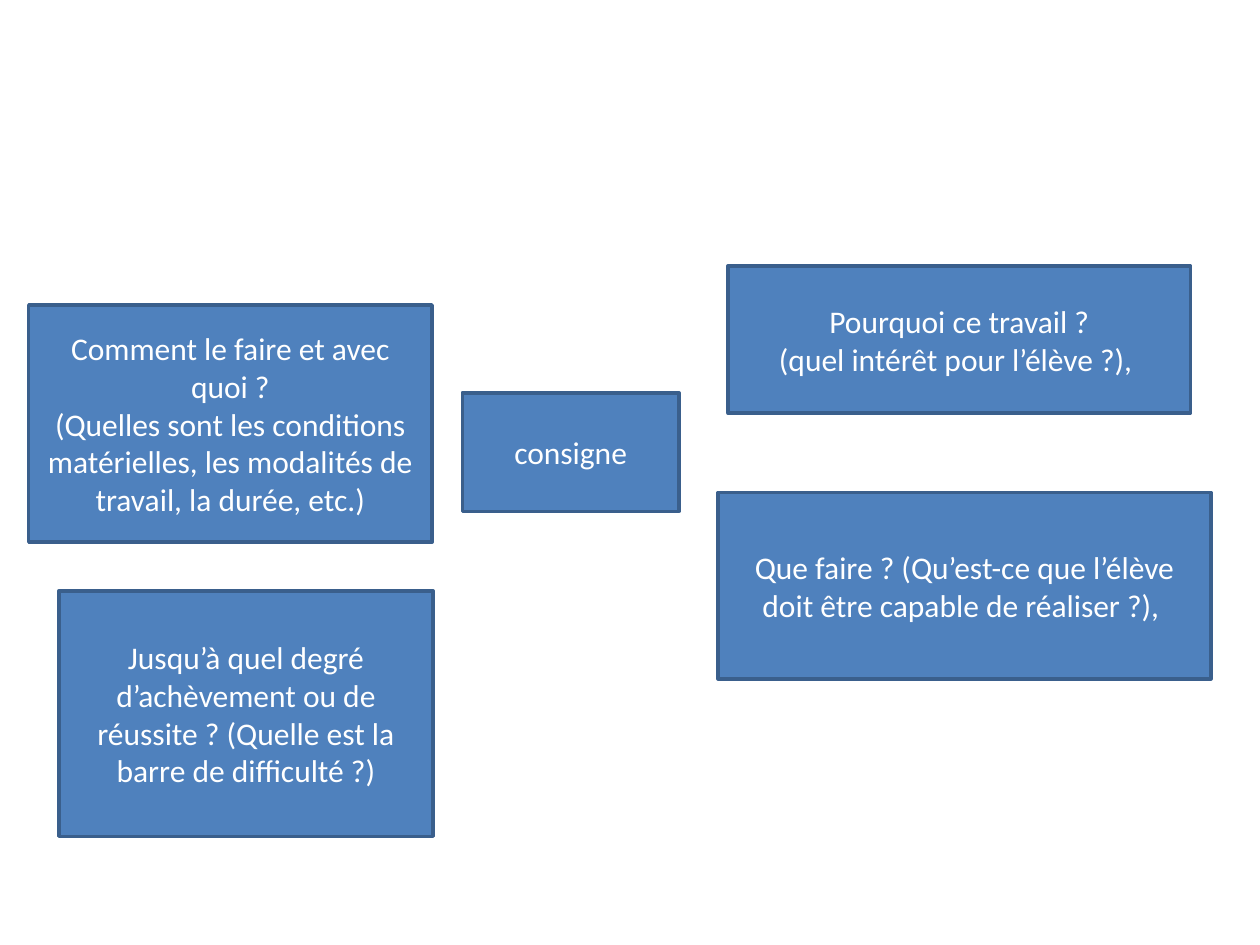
from dataclasses import dataclass

from pptx import Presentation
from pptx.dml.color import RGBColor
from pptx.enum.shapes import MSO_SHAPE
from pptx.enum.text import MSO_ANCHOR, PP_ALIGN
from pptx.util import Cm, Pt

RECT = MSO_SHAPE.RECTANGLE
MIDDLE = MSO_ANCHOR.MIDDLE
CENTER = PP_ALIGN.CENTER


@dataclass(frozen=True)
class Theme:
    fill: RGBColor = RGBColor(0x4F, 0x81, 0xBD)
    line: RGBColor = RGBColor(0x3A, 0x5F, 0x8C)
    text: RGBColor = RGBColor(0xFF, 0xFF, 0xFF)
    font: str = "Calibri"
    size: Pt = Pt(18)
    line_width: Pt = Pt(2)


class SlideBuilder:
    def __init__(self, s, theme):
        self.s = s
        self.theme = theme

    def box(self, left, top, width, height, *paragraphs):
        t = self.theme
        sp = self.s.shapes.add_shape(RECT, Cm(left), Cm(top), Cm(width), Cm(height))
        sp.shadow.inherit = False
        sp.fill.solid()
        sp.fill.fore_color.rgb = t.fill
        sp.line.color.rgb = t.line
        sp.line.width = t.line_width
        tf = sp.text_frame
        tf.word_wrap = True
        tf.vertical_anchor = MIDDLE
        tf.text = "\n".join(paragraphs)
        for p in tf.paragraphs:
            p.alignment = CENTER
            p.font.name = t.font
            p.font.size = t.size
            p.font.color.rgb = t.text


def main():
    prs = Presentation()
    prs.slide_width, prs.slide_height = Cm(25.4), Cm(19.05)
    s = prs.slides.add_slide(prs.slide_layouts[6])
    builder = SlideBuilder(s, Theme())

    builder.box(9.32, 7.92, 4.37, 2.39, "consigne")
    builder.box(14.68, 5.36, 9.32, 2.97,
                "Pourquoi ce travail ?",
                "(quel intérêt pour l’élève ?), ")
    builder.box(14.48, 9.93, 9.93, 3.76,
                "Que faire ? (Qu’est-ce que l’élève doit être capable de réaliser ?), ")
    builder.box(1.19, 11.91, 7.54, 4.95,
                "Jusqu’à quel degré d’achèvement ou de réussite ? "
                "(Quelle est la barre de difficulté ?)")
    builder.box(0.58, 6.15, 8.13, 4.78,
                "Comment le faire et avec quoi ?",
                "(Quelles sont les conditions matérielles, les modalités de travail, "
                "la durée, etc.)")

    prs.save("out.pptx")


if __name__ == "__main__":
    main()
